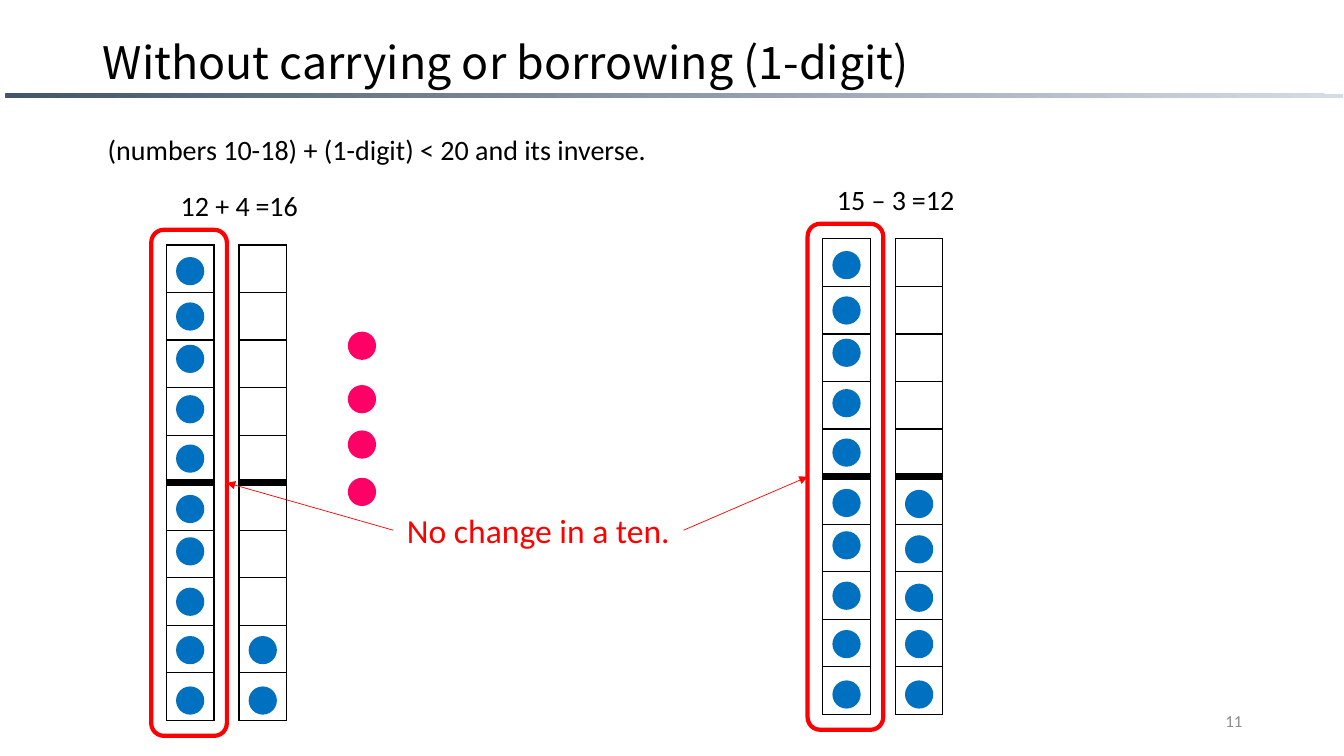
import pptx
import pptx.util
import pptx.dml.color
import pptx.enum.shapes
import pptx.enum.text
import pptx.oxml
import pptx.oxml.ns
import lxml.etree
from dataclasses import dataclass

Inches = pptx.util.Inches
Shapes = pptx.enum.shapes.MSO_SHAPE
Align = pptx.enum.text.PP_ALIGN
Anchor = pptx.enum.text.MSO_ANCHOR


@dataclass(frozen=True)
class Theme:
    black: str = "000000"
    grey: str = "8C8C8C"
    red: str = "FF0000"
    blue: str = "0070C0"
    pink: str = "FF0066"
    rule_light: str = "D6DCE5"
    rule_dark: str = "44546A"
    title_font: str = "Noto Sans CJK JP"
    body_font: str = "Calibri"
    title_size: int = 32
    callout_size: int = 24
    body_size: int = 20
    number_size: int = 12


THEME = Theme()
CELL = 0.472
ROWS = 10
COLUMN_GAP = 0.72
DOT = 0.28
# Dot tops, measured from the top of a column
TEN_DOTS = (0.12, 0.57, 0.99, 1.49, 1.98, 2.48, 2.9, 3.4, 3.88, 4.38)
ONES_DOTS = (2.49, 2.94, 3.42, 3.88, 4.38)
ADDED_DOTS = (0.86, 1.39, 1.84, 2.31)


def rgb(color):
    return pptx.dml.color.RGBColor.from_string(color)


def set_attributes(target, values):
    for name, value in values.items():
        setattr(target, name, value)


def box_lengths(*box):
    return [Inches(length) for length in box]


def write_text(shape, text, size, color=THEME.black, font=THEME.body_font,
               frame_format=None, paragraph_format=None):
    frame = shape.text_frame
    frame.text = text
    set_attributes(frame, {"word_wrap": True, **(frame_format or {})})
    paragraph = frame.paragraphs[0]
    set_attributes(paragraph, paragraph_format or {})
    run_font = paragraph.runs[0].font
    set_attributes(run_font, {"size": pptx.util.Pt(size), "name": font})
    run_font.color.rgb = rgb(color)


def add_text(slide, box, text, size, **formats):
    shape = slide.shapes.add_textbox(*box_lengths(*box))
    write_text(shape, text, size, **formats)
    return shape


def add_header(slide, left, top, width):
    """Place the gradient rule and the title above it."""
    rule = slide.shapes.add_shape(
        Shapes.RECTANGLE, *box_lengths(left, top + 0.93, width, 0.04))
    rule.shadow.inherit = False
    rule.line.fill.background()
    rule.fill.gradient()
    rule.fill.gradient_angle = 230
    for stop, color in zip(rule.fill.gradient_stops,
                           (THEME.rule_light, THEME.rule_dark)):
        stop.color.rgb = rgb(color)

    title = slide.shapes.title
    box = box_lengths(left + 0.86, top + 0.4, 11.9, 0.49)
    set_attributes(title, dict(zip(("left", "top", "width", "height"), box)))
    write_text(title, "Without carrying or borrowing (1-digit)",
               THEME.title_size, font=THEME.title_font,
               frame_format={"vertical_anchor": Anchor.MIDDLE},
               paragraph_format={"alignment": Align.LEFT, "line_spacing": 0.9})


def set_borders(cell, widths):
    """Draw black borders, with widths in points keyed by side: L, R, T, B."""
    properties = cell._tc.get_or_add_tcPr()
    for side, width in widths.items():
        properties.append(pptx.oxml.parse_xml(
            f'<a:ln{side} {pptx.oxml.ns.nsdecls("a")} w="{pptx.util.Pt(width)}">'
            f'<a:solidFill><a:srgbClr val="{THEME.black}"/></a:solidFill>'
            f'</a:ln{side}>'))


def add_column(slide, left, top):
    """Stack ten cells with a thick line after the fifth."""
    table = slide.shapes.add_table(
        ROWS, 1, *box_lengths(left, top, CELL, CELL * ROWS)).table
    set_attributes(table, {"first_row": False, "horz_banding": False})
    for index in range(ROWS):
        table.rows[index].height = Inches(CELL)
        cell = table.cell(index, 0)
        set_borders(cell, {"L": 1, "R": 1,
                           "T": 6 if index == ROWS // 2 else 1,
                           "B": 6 if index == ROWS // 2 - 1 else 1})
        cell.fill.background()


def add_dots(slide, left, top, offsets, color):
    for offset in offsets:
        dot = slide.shapes.add_shape(
            Shapes.OVAL, *box_lengths(left, top + offset, DOT, DOT))
        dot.shadow.inherit = False
        dot.fill.solid()
        dot.fill.fore_color.rgb = rgb(color)
        dot.line.fill.background()


def add_example(slide, left, top, question, answer, ones):
    """Place one sum with its two columns and return the frame of the ten."""
    centered = {"alignment": Align.CENTER}
    for offset, width, text in ((-0.17, 1.31, question), (0.76, 0.67, answer)):
        add_text(slide, (left + offset, top - 0.61, width, 0.44), text,
                 THEME.body_size, paragraph_format=centered)

    dot_inset = (CELL - DOT) / 2
    for x, offsets in ((left, TEN_DOTS), (left + COLUMN_GAP, ONES_DOTS[-ones:])):
        add_column(slide, x, top)
        add_dots(slide, x + dot_inset, top, offsets, THEME.blue)

    frame = slide.shapes.add_shape(
        Shapes.ROUNDED_RECTANGLE,
        *box_lengths(left - 0.15, top - 0.15, 0.75, CELL * ROWS + 0.3))
    frame.shadow.inherit = False
    frame.fill.background()
    frame.line.color.rgb = rgb(THEME.red)
    frame.line.width = pptx.util.Pt(3)
    return frame


def add_arrow(slide, start, start_site, end, end_site):
    arrow = slide.shapes.add_connector(
        pptx.enum.shapes.MSO_CONNECTOR.STRAIGHT, 0, 0, 0, 0)
    arrow.begin_connect(start, start_site)
    arrow.end_connect(end, end_site)
    arrow.line.color.rgb = rgb(THEME.red)
    arrow.line.width = pptx.util.Pt(0.5)
    tag = pptx.oxml.ns.qn
    lxml.etree.SubElement(arrow.line._get_or_add_ln(), tag("a:tailEnd"),
                          type="triangle")
    lxml.etree.SubElement(arrow._element.spPr, tag("a:effectLst"))


def add_callout(slide, box, left_frame, right_frame):
    callout = add_text(slide, box, "No change in a ten.", THEME.callout_size,
                       color=THEME.red,
                       paragraph_format={"alignment": Align.CENTER})
    add_arrow(slide, callout, 1, left_frame, 3)
    add_arrow(slide, callout, 3, right_frame, 1)


def main():
    presentation = pptx.Presentation()
    set_attributes(presentation, {"slide_width": Inches(13.33),
                                  "slide_height": Inches(7.5)})
    slide = presentation.slides.add_slide(presentation.slide_layouts[5])

    add_header(slide, 0.06, 0, 13.26)
    add_text(slide, (0.97, 1.1, 6.67, 0.55),
             "(numbers 10-18) + (1-digit) < 20 and its inverse.",
             THEME.body_size, paragraph_format={"line_spacing": 1.5})
    addition = add_example(slide, 1.65, 2.43, "12 + 4", "=16", 2)
    add_dots(slide, 3.45, 2.43, ADDED_DOTS, THEME.pink)
    subtraction = add_example(slide, 8.16, 2.37, "15 – 3", "=12", 5)
    add_callout(slide, (3.9, 5.01, 2.88, 0.5), addition, subtraction)
    add_text(slide, (9.42, 6.95, 3, 0.4), "11", THEME.number_size,
             color=THEME.grey,
             frame_format={"vertical_anchor": Anchor.MIDDLE},
             paragraph_format={"alignment": Align.RIGHT})
    presentation.save("out.pptx")


if __name__ == "__main__":
    main()
